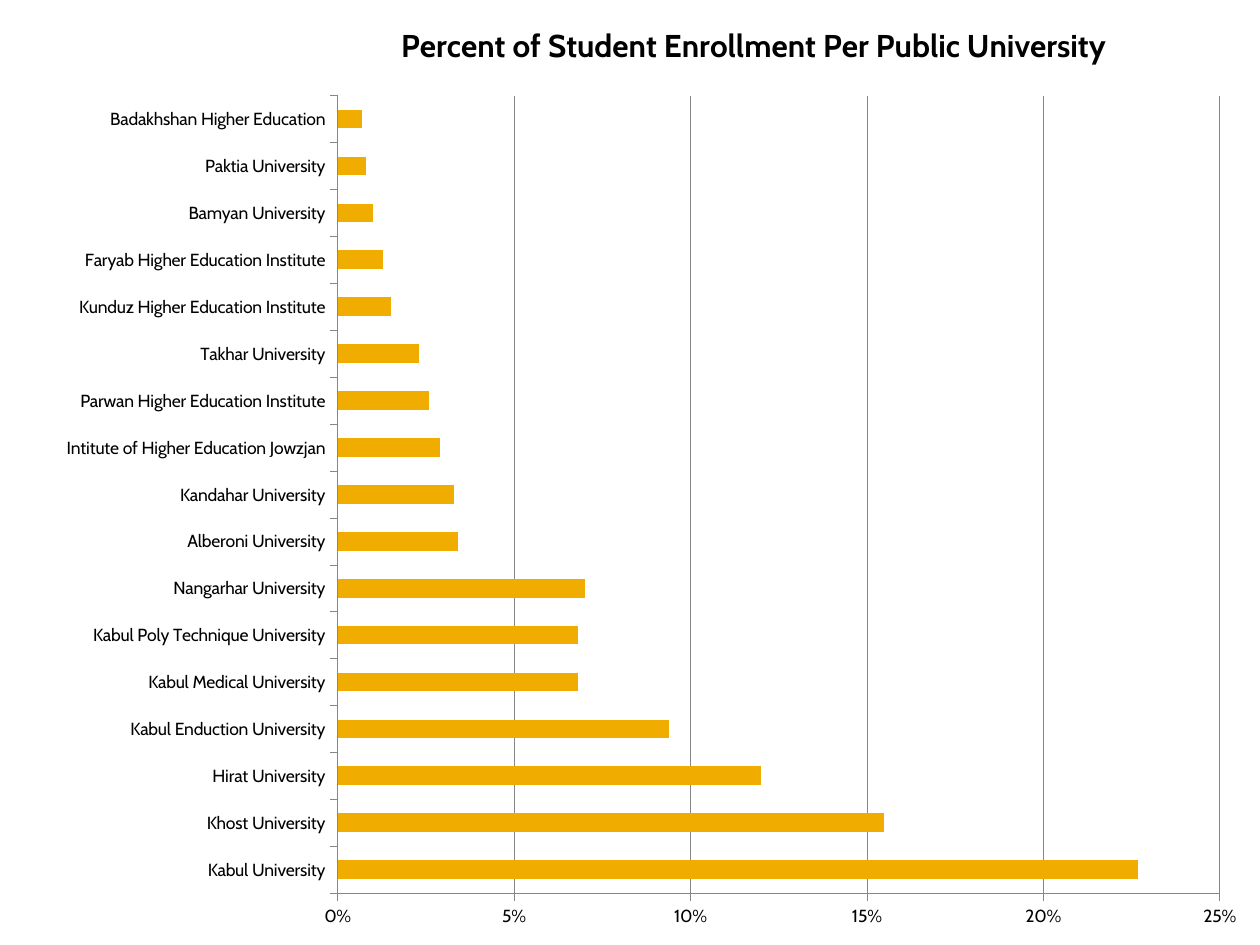
from typing import NamedTuple, Optional

from lxml import etree
from pptx import Presentation
from pptx.chart.data import CategoryChartData
from pptx.dml.color import RGBColor
from pptx.enum.chart import XL_CHART_TYPE as ChartType, XL_TICK_MARK as TickMark
from pptx.oxml import parse_xml
from pptx.oxml.ns import nsdecls
from pptx.util import Inches, Pt

FONT = "Cabin"
BLACK, GRAY, AMBER = "000000", "878787", "F0AD00"
TITLE = "Percent of Student Enrollment Per Public University"


class Enrollment(NamedTuple):
    university: str
    share: float


class Box(NamedTuple):
    left: float
    top: float
    width: Optional[float] = None
    height: Optional[float] = None


ENROLLMENTS = [
    Enrollment("Kabul University", 0.227),
    Enrollment("Khost University", 0.155),
    Enrollment("Hirat University", 0.12),
    Enrollment("Kabul Enduction University", 0.094),
    Enrollment("Kabul Medical University", 0.068),
    Enrollment("Kabul Poly Technique University", 0.068),
    Enrollment("Nangarhar University", 0.07),
    Enrollment("Alberoni University", 0.034),
    Enrollment("Kandahar University", 0.033),
    Enrollment("Intitute of Higher Education Jowzjan", 0.029),
    Enrollment("Parwan Higher Education Institute", 0.026),
    Enrollment("Takhar University", 0.023),
    Enrollment("Kunduz Higher Education Institute", 0.015),
    Enrollment("Faryab Higher Education Institute", 0.013),
    Enrollment("Bamyan University", 0.01),
    Enrollment("Paktia University", 0.008),
    Enrollment("Badakhshan Higher Education", 0.007),
]

# Places on the slide, in inches
CHART = Box(0.33, 0, 9.67, 7.5)
PLOT = Box(2.68, 0.76, 7, 6.33)
HEADING = Box(3.14, 0.14)


def color(hex_code: str) -> RGBColor:
    return RGBColor.from_string(hex_code)


def style_font(font, size: float, bold: bool = False) -> None:
    font.name = FONT
    font.size = Pt(size)
    font.bold = bold
    font.color.rgb = color(BLACK)


def style_line(line) -> None:
    line.color.rgb = color(GRAY)
    line.width = Pt(0.25)


def layout_xml(box: Box, inner: bool = False) -> etree._Element:
    """Manual chart layout, as fractions of the chart frame."""
    fractions = {"x": (box.left - CHART.left) / CHART.width,
                 "y": (box.top - CHART.top) / CHART.height}
    if box.width is not None:
        fractions.update(w=box.width / CHART.width, h=box.height / CHART.height)
    target = '<c:layoutTarget val="inner"/>' if inner else ""
    modes = '<c:xMode val="edge"/><c:yMode val="edge"/>'
    sizes = "".join(f'<c:{key} val="{value:.4f}"/>' for key, value in fractions.items())
    return parse_xml(f'<c:layout {nsdecls("c")}><c:manualLayout>'
                     f"{target}{modes}{sizes}</c:manualLayout></c:layout>")


def set_layout(parent: etree._Element, box: Box, index: int, inner: bool = False) -> None:
    for old in parent.findall("{*}layout"):
        parent.remove(old)
    parent.insert(index, layout_xml(box, inner))


def add_enrollment_chart(slide) -> None:
    shares = CategoryChartData(number_format="0%")
    shares.categories = [entry.university for entry in ENROLLMENTS]
    shares.add_series("Series 1", [entry.share for entry in ENROLLMENTS])
    chart = slide.shapes.add_chart(
        ChartType.BAR_STACKED, *(Inches(length) for length in CHART), shares).chart
    style_font(chart.font, 10)
    chart.has_legend = False

    # Heading
    chart.has_title = True
    heading = chart.chart_title
    heading_run = heading.text_frame.paragraphs[0].add_run()
    heading_run.text = TITLE
    style_font(heading_run.font, 18, bold=True)
    heading.include_in_layout = False
    set_layout(heading._element, HEADING, 1)

    # Bars
    bars = chart.plots[0]
    bars.gap_width = 150
    bars.overlap = 100
    bars.vary_by_categories = False
    enrollment = bars.series[0]
    enrollment.format.fill.solid()
    enrollment.format.fill.fore_color.rgb = color(AMBER)

    # Axes
    universities, percents = chart.category_axis, chart.value_axis
    for axis in (universities, percents):
        axis.major_tick_mark = TickMark.OUTSIDE
        axis.minor_tick_mark = TickMark.NONE
        style_line(axis.format.line)
        style_font(axis.tick_labels.font, 10)
    universities.has_major_gridlines = False
    percents.has_major_gridlines = True
    style_line(percents.major_gridlines.format.line)
    percents.minimum_scale, percents.maximum_scale = 0, 0.25
    percents.major_unit = 0.05
    percents.tick_labels.number_format = "0%"
    percents.tick_labels.number_format_is_linked = False

    set_layout(chart._chartSpace.chart.plotArea, PLOT, 0, inner=True)


def main() -> None:
    deck = Presentation()
    deck.slide_width, deck.slide_height = Inches(10), Inches(7.5)
    add_enrollment_chart(deck.slides.add_slide(deck.slide_layouts[6]))
    deck.save("out.pptx")


if __name__ == "__main__":
    main()
